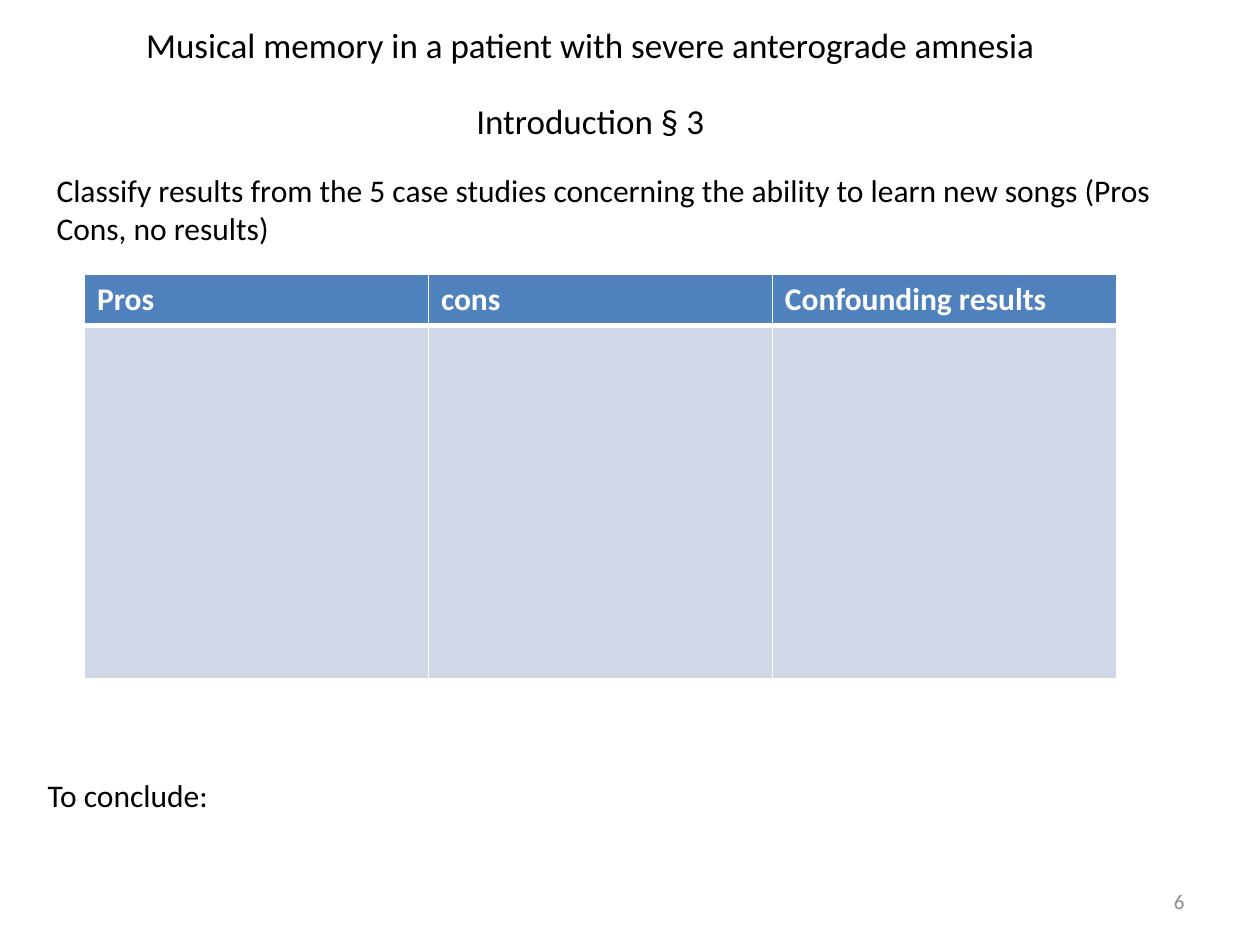
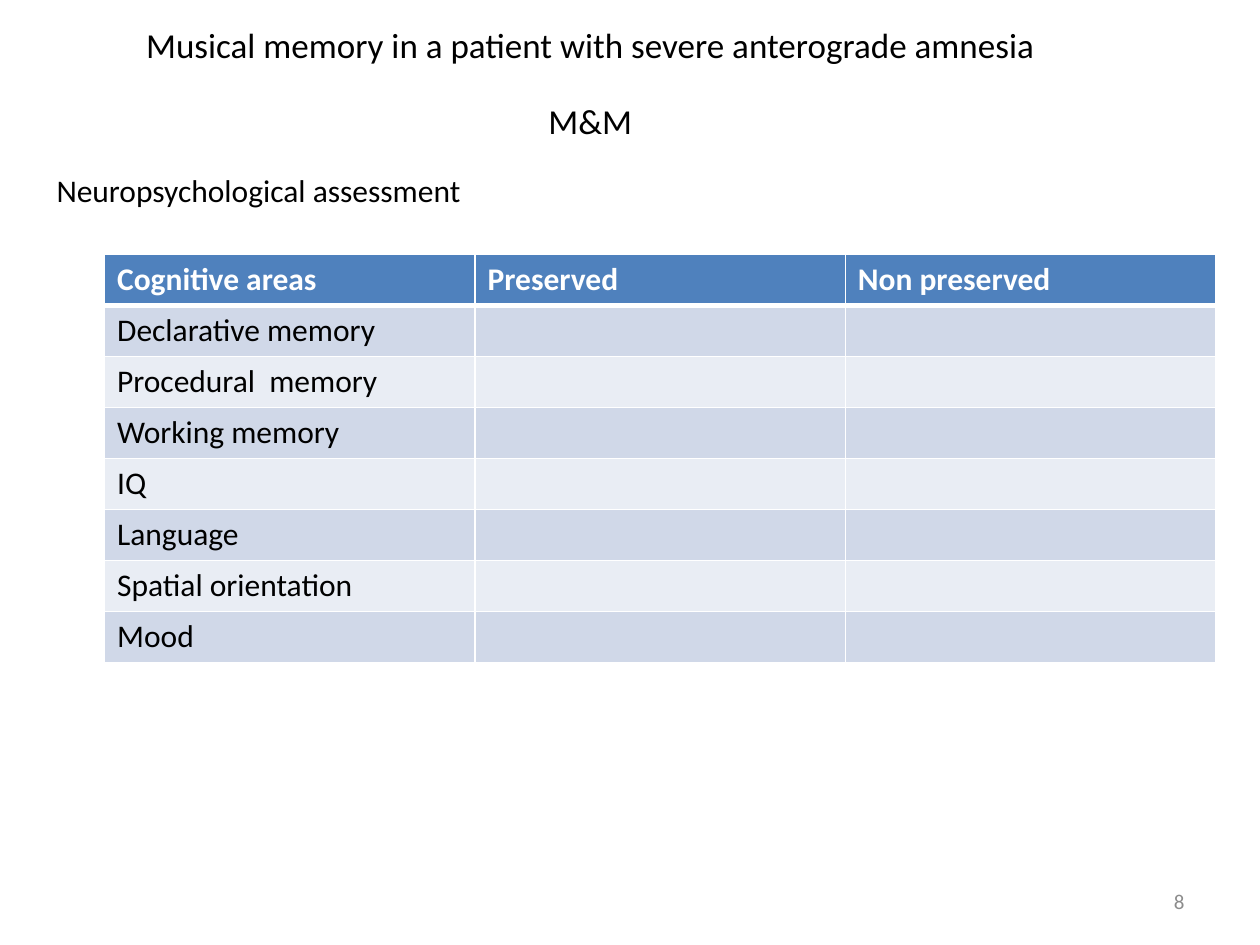
import pptx
import pptx.dml.color
import pptx.enum.text
import pptx.oxml
import pptx.oxml.ns
import pptx.util

Inches = pptx.util.Inches
ALIGN = pptx.enum.text.PP_ALIGN
ANCHOR = pptx.enum.text.MSO_ANCHOR

FONT = "Calibri"
BLACK, WHITE, GREY = "000000", "FFFFFF", "8C8C8C"
HEADER_BLUE = "4F81BD"
BAND_COLOURS = ["D0D8E8", "E9EDF4"]
HEADER_HEIGHT = 0.405

# Boxes as left, top, width, height in inches
TITLE_BOX = (0.59, 0, 8.19, 0.71)
SECTION_BOX = (0.59, 0.6, 8.19, 0.71)
NUMBER_BOX = (7.17, 6.95, 2.33, 0.4)


def colour(hex_code):
    return pptx.dml.color.RGBColor.from_string(hex_code)


def format_text(text_frame, size, hex_code, align=ALIGN.LEFT, bold=False):
    for paragraph in text_frame.paragraphs:
        paragraph.alignment = align
        for run in paragraph.runs:
            run.font.name = FONT
            run.font.size = pptx.util.Pt(size)
            run.font.bold = bold
            run.font.color.rgb = colour(hex_code)


def fill_text(shape, text, size, hex_code=BLACK, align=ALIGN.LEFT, anchor=ANCHOR.TOP):
    text_frame = shape.text_frame
    text_frame.text = text
    text_frame.word_wrap = True
    text_frame.vertical_anchor = anchor
    format_text(text_frame, size, hex_code, align)


def add_text(slide, box, text, size, **style):
    shape = slide.shapes.add_textbox(*map(Inches, box))
    fill_text(shape, text, size, **style)


def add_borders(cell, bottom_width):
    """Draw white cell borders, 1 pt except for the bottom one."""
    properties = cell._tc.get_or_add_tcPr()
    for side, width in (("L", 1), ("R", 1), ("T", 1), ("B", bottom_width)):
        properties.append(pptx.oxml.parse_xml(
            f'<a:ln{side} {pptx.oxml.ns.nsdecls("a")} w="{pptx.util.Pt(width)}">'
            f'<a:solidFill><a:srgbClr val="{WHITE}"/></a:solidFill></a:ln{side}>'))


def add_banded_table(slide, box, headings, row_labels, row_height):
    """Add a table with a header row and one banded row per label."""
    frame = slide.shapes.add_table(len(row_labels) + 1, len(headings), *map(Inches, box))
    table = frame.table
    for column in table.columns:
        column.width = Inches(box[2] / len(headings))
    blank_cells = [""] * (len(headings) - 1)
    contents = [headings] + [[label] + blank_cells for label in row_labels]
    for index, (row, texts) in enumerate(zip(table.rows, contents)):
        is_header = index == 0
        row.height = Inches(HEADER_HEIGHT if is_header else row_height)
        for cell, text in zip(row.cells, texts):
            add_borders(cell, 3 if is_header or len(row_labels) == 0 else 1)
            cell.fill.solid()
            cell.fill.fore_color.rgb = colour(
                HEADER_BLUE if is_header else BAND_COLOURS[(index - 1) % 2])
            if text:
                cell.text_frame.text = text
                format_text(cell.text_frame, 18, WHITE if is_header else BLACK, bold=is_header)


def add_base_slide(presentation, section, number):
    """Add a slide with the shared title, section heading and number."""
    slide = presentation.slides.add_slide(presentation.slide_layouts.get_by_name("Title Only"))
    title = slide.shapes.title
    title.left, title.top, title.width, title.height = map(Inches, TITLE_BOX)
    centred = {"align": ALIGN.CENTER, "anchor": ANCHOR.MIDDLE}
    fill_text(title, "Musical memory in a patient with severe anterograde amnesia", 20, **centred)
    add_text(slide, SECTION_BOX, section, 20, **centred)
    add_text(slide, NUMBER_BOX, number, 12, hex_code=GREY,
             align=ALIGN.RIGHT, anchor=ANCHOR.MIDDLE)
    return slide


def build_case_studies(presentation):
    slide = add_base_slide(presentation, "Introduction § 3", "6")
    add_text(slide, (0.35, 1.31, 9.29, 1.01),
             "Classify results from the 5 case studies concerning the ability "
             "to learn new songs (Pros Cons, no results)", 18)
    add_banded_table(slide, (0.67, 2.18, 8.19, 3.2),
                     ["Pros", "cons", "Confounding results"], [""], 2.8)
    add_text(slide, (0.28, 6.11, 9.29, 0.71), "To conclude:", 18)


def build_assessment(presentation):
    slide = add_base_slide(presentation, "M&M", "8")
    add_text(slide, (0.35, 1.31, 9.29, 0.4), "Neuropsychological assessment", 18)
    areas = ["Declarative memory", "Procedural  memory", "Working memory", "IQ",
             "Language", "Spatial orientation", "Mood"]
    add_banded_table(slide, (0.83, 2.02, 8.82, 3.24),
                     ["Cognitive areas", "Preserved", "Non preserved"], areas, HEADER_HEIGHT)


def main():
    presentation = pptx.Presentation()
    presentation.slide_width, presentation.slide_height = Inches(10), Inches(7.5)
    build_case_studies(presentation)
    build_assessment(presentation)
    presentation.save("out.pptx")


if __name__ == "__main__":
    main()
